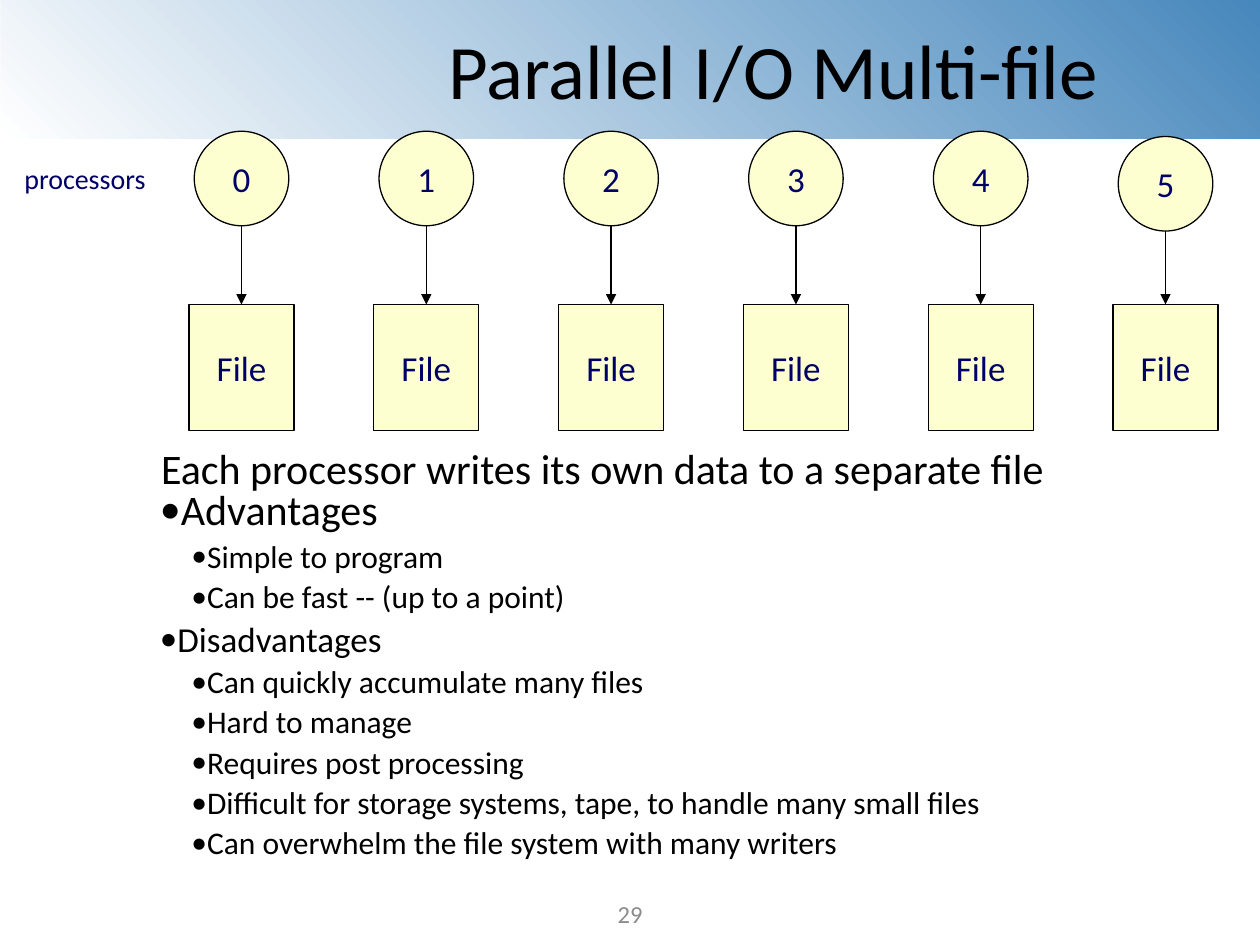
from lxml import etree
from pptx import Presentation
from pptx.dml.color import RGBColor
from pptx.enum.shapes import MSO_CONNECTOR, MSO_SHAPE
from pptx.enum.text import MSO_ANCHOR, PP_ALIGN
from pptx.oxml import parse_xml
from pptx.oxml.ns import nsdecls, qn
from pptx.util import Inches, Pt

STRAIGHT = MSO_CONNECTOR.STRAIGHT
OVAL, RECT = MSO_SHAPE.OVAL, MSO_SHAPE.RECTANGLE
MIDDLE, TOP = MSO_ANCHOR.MIDDLE, MSO_ANCHOR.TOP
CENTER, LEFT = PP_ALIGN.CENTER, PP_ALIGN.LEFT
TOP_SIDE = 0
COLUMNS, ROWS = 120, 90

POINTS = [
    ("Advantages", 1, 24),
    ("Simple to program", 2, 18),
    ("Can be fast -- (up to a point)", 2, 18),
    ("Disadvantages", 1, 20),
    ("Can quickly accumulate many files", 2, 18),
    ("Hard to manage", 2, 18),
    ("Requires post processing", 2, 18),
    ("Difficult for storage systems, tape, to handle many small files", 2, 18),
    ("Can overwhelm the file system with many writers", 2, 18),
]


def rgb(color):
    return RGBColor.from_string(color)


class SlideBuilder:
    font = "Calibri"
    black = "000000"
    navy = "000066"
    cream = "FEFFD1"
    gray = "8C8C8C"
    band_color = "4687BC"
    line_width = Pt(0.75)

    def __init__(self, deck):
        self.cell_width = deck.slide_width / COLUMNS
        self.cell_height = deck.slide_height / ROWS
        self.slide = deck.slides.add_slide(deck.slide_layouts[5])
        self.shapes = self.slide.shapes

    def area(self, column, row, columns, rows):
        return (round(column * self.cell_width), round(row * self.cell_height),
                round(columns * self.cell_width), round(rows * self.cell_height))

    def style(self, paragraph, size, color, align=CENTER):
        paragraph.alignment = align
        paragraph.font.name = self.font
        paragraph.font.size = Pt(size)
        paragraph.font.color.rgb = rgb(color)

    def band(self, *area):
        band = self.shapes.add_shape(RECT, *self.area(*area))
        band.shadow.inherit = False
        band.line.fill.background()
        properties = band.fill._xPr
        gradient = parse_xml(
            f'<a:gradFill {nsdecls("a")} rotWithShape="1"><a:gsLst>'
            f'<a:gs pos="0"><a:srgbClr val="{self.band_color}"/></a:gs>'
            '<a:gs pos="100000"><a:srgbClr val="FFFFFF"/></a:gs></a:gsLst>'
            '<a:path path="circle"><a:fillToRect l="100000" b="100000"/></a:path>'
            '</a:gradFill>')
        properties.find(qn("a:prstGeom")).addnext(gradient)
        self.shapes._spTree.insert(2, band._element)

    def title(self, text, *area):
        title = self.shapes.title
        title.left, title.top, title.width, title.height = self.area(*area)
        title.text_frame.text = text
        title.text_frame.vertical_anchor = MIDDLE
        self.style(title.text_frame.paragraphs[0], 44, self.black)

    def node(self, kind, text, *area):
        node = self.shapes.add_shape(kind, *self.area(*area))
        node.shadow.inherit = False
        node.fill.solid()
        node.fill.fore_color.rgb = rgb(self.cream)
        node.line.color.rgb = rgb(self.black)
        node.line.width = self.line_width
        frame = node.text_frame
        frame.text = text
        frame.word_wrap = False
        frame.vertical_anchor = MIDDLE
        self.style(frame.paragraphs[0], 20, self.navy)
        return node

    def arrow(self, processor, file):
        center = processor.left + processor.width // 2
        arrow = self.shapes.add_connector(
            STRAIGHT, center, processor.top + processor.height, center, file.top)
        arrow.end_connect(file, TOP_SIDE)
        arrow.line.color.rgb = rgb(self.black)
        arrow.line.width = self.line_width
        etree.SubElement(arrow.line._get_or_add_ln(), qn("a:tailEnd"), type="triangle")
        etree.SubElement(arrow._element.spPr, qn("a:effectLst"))

    def label(self, text, size, color, *area, wrap=True, anchor=TOP):
        frame = self.shapes.add_textbox(*self.area(*area)).text_frame
        frame.text = text
        frame.word_wrap = wrap
        frame.vertical_anchor = anchor
        self.style(frame.paragraphs[0], size, color)

    def outline(self, points, *area, bullets=True):
        frame = self.shapes.add_textbox(*self.area(*area)).text_frame
        frame.word_wrap = True
        for index, (text, level, size) in enumerate(points):
            paragraph = frame.add_paragraph() if index else frame.paragraphs[0]
            paragraph.text = text
            paragraph.level = level - 1
            paragraph.line_spacing = 0.9
            if index:
                paragraph.space_before = Pt(size * 0.2)
            properties = paragraph._p.get_or_add_pPr()
            properties.set("marL", str(Inches(0.25 * level)))
            properties.set("indent", str(-Inches(0.12)))
            if bullets:
                etree.SubElement(properties, qn("a:buFont"), typeface=self.font)
                etree.SubElement(properties, qn("a:buChar"), char="•")
            self.style(paragraph, size, self.black, LEFT)


def main():
    deck = Presentation()
    deck.slide_width, deck.slide_height = Inches(10), Inches(7.5)
    page = SlideBuilder(deck)

    page.band(0.1, 0, 120, 13.2)
    page.title("Parallel I/O Multi-file ", 30, 1.5, 89, 10)
    page.label("processors", 16, page.navy, 1, 14.8, 14.2, 4.4,
               wrap=False, anchor=MIDDLE)

    processor_rows = [12.5] * 5 + [13]
    for number, row in enumerate(processor_rows):
        column = 18 + 17.6 * number
        processor = page.node(OVAL, str(number), column + 0.5, row, 9, 9)
        file = page.node(RECT, "File", column, 29, 10, 12)
        page.arrow(processor, file)

    page.outline(POINTS, 12.5, 46, 95.8, 39)
    page.outline([("Each processor writes its own data to a separate file", 1, 24)],
                 12.6, 42.1, 95.8, 6.1, bullets=False)
    page.label("29", 14, page.gray, 46, 85, 28, 4)

    deck.save("out.pptx")


if __name__ == "__main__":
    main()
